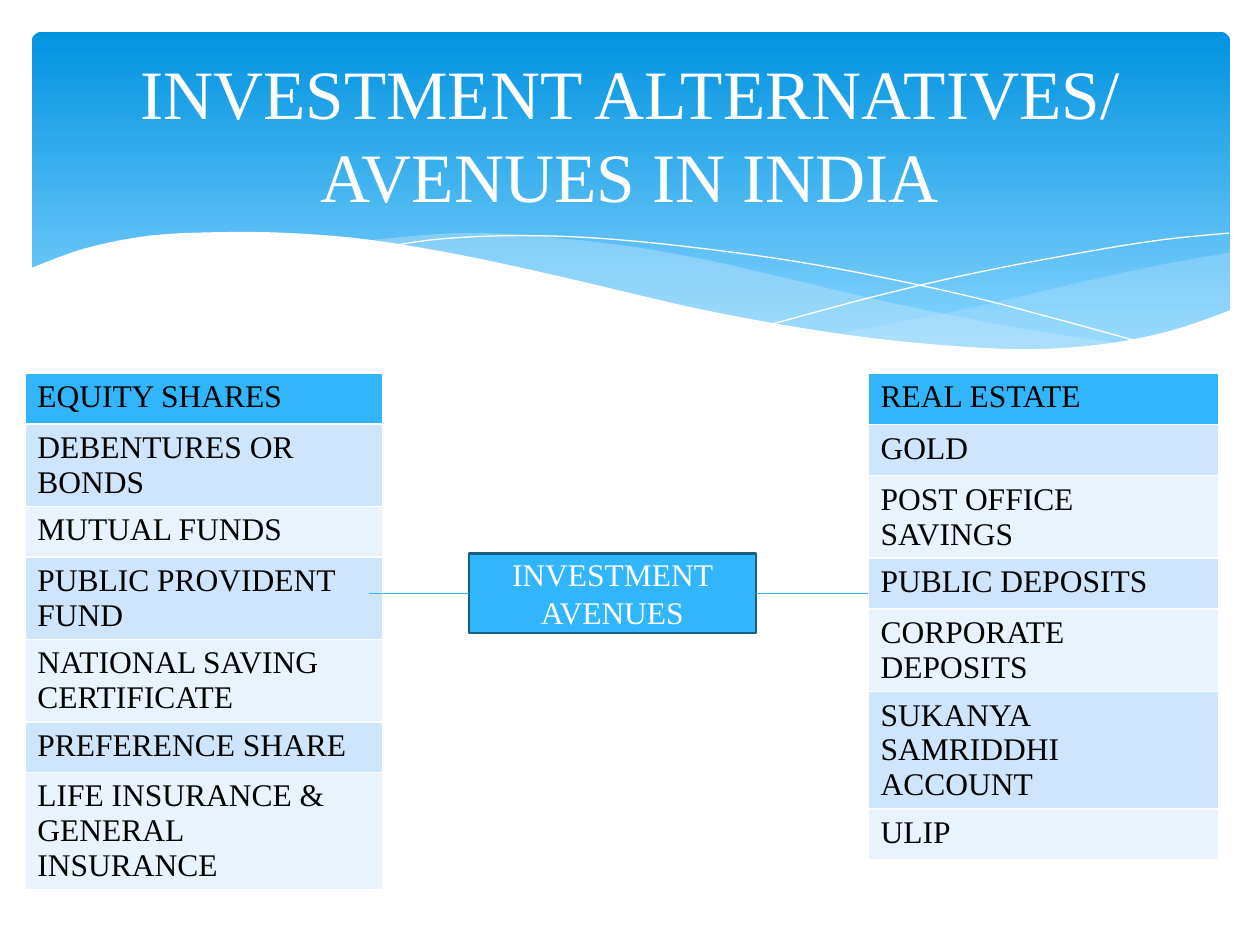
import lxml.etree
import pptx
import pptx.dml.color
import pptx.enum.dml
import pptx.enum.shapes
import pptx.enum.text
import pptx.oxml.ns
import pptx.util

Cm = pptx.util.Cm
Pt = pptx.util.Pt
RGB = pptx.dml.color.RGBColor
qn = pptx.oxml.ns.qn

WHITE = RGB(0xFF, 0xFF, 0xFF)
BLACK = RGB(0, 0, 0)
BLUE = RGB(0x31, 0xB6, 0xFD)
EDGE = RGB(0x19, 0x5F, 0x84)
SKY_TOP = RGB(0x02, 0x93, 0xE0)
SKY_END = RGB(0x83, 0xD3, 0xFE)
HAZE = RGB(0xC6, 0xE7, 0xFC)
BANDS = (RGB(0xCE, 0xE5, 0xFE), RGB(0xE8, 0xF3, 0xFF))

BODY = {"name": "Times New Roman", "size": Pt(18), "bold": False}
HEADING = {**BODY, "size": Pt(39.6)}

RIGHT_WAVE = [
    [(24.16, 4.45), (22.76, 4.7), (21.23, 5.03), (18.49, 5.66), (16.15, 6.1)],
    [(16.15, 6.1), (17.63, 6.27), (19.2, 6.4), (20.57, 6.4), (22.15, 6.22),
     (23.29, 5.94), (24.16, 5.64)],
]
MIDDLE_WAVE = [
    [(22.05, 6.3), (19.86, 5.97), (17.3, 5.46), (15.34, 5), (13.46, 4.57),
     (11.79, 4.29), (10.03, 4.11), (8.53, 4.06), (6.63, 4.22)],
    [(6.63, 4.22), (8.56, 4.52), (10.77, 5), (12.83, 5.46), (15.06, 5.92),
     (17.02, 6.22), (19, 6.4), (20.4, 6.43), (22.05, 6.3)],
]
FALLING_LINE = [
    [(7.21, 4.32), (8.33, 4.17), (9.93, 4.11), (11.79, 4.19), (14.15, 4.45),
     (16.26, 4.78), (18.67, 5.28), (20.47, 5.74), (22.4, 6.27)],
]
RISING_LINE = [
    [(14.94, 5.89), (17.02, 5.33), (19.08, 4.85), (21.36, 4.42),
     (22.83, 4.19), (24.13, 4.06)],
]
WHITE_WAVE = [
    [(24.18, 5.61), (22.99, 6.02), (21.59, 6.3), (19.91, 6.4), (17.81, 6.27),
     (15.82, 6.02), (13.46, 5.59), (10.72, 4.95), (8.64, 4.5), (6.78, 4.19),
     (5.21, 4.06), (3.86, 4.04), (2.39, 4.11), (1.07, 4.37), (-0.05, 4.78)],
    [(-0.05, 7.72), (24.18, 7.72)],
]

LEFT_ITEMS = [
    "EQUITY SHARES", "DEBENTURES OR BONDS", "MUTUAL FUNDS",
    "PUBLIC PROVIDENT FUND", "NATIONAL SAVING CERTIFICATE",
    "PREFERENCE SHARE", "LIFE INSURANCE & GENERAL INSURANCE",
]
RIGHT_ITEMS = [
    "REAL ESTATE", "GOLD", "POST OFFICE SAVINGS", "PUBLIC DEPOSITS",
    "CORPORATE DEPOSITS", "SUKANYA SAMRIDDHI ACCOUNT", "ULIP",
]


def write(tf, text, font, color, align):
    p = tf.paragraphs[0]
    p.alignment = align
    r = p.add_run()
    r.text = text
    for name, value in font.items():
        setattr(r.font, name, value)
    r.font.color.rgb = color


def smooth(knots, steps=5):
    if len(knots) < 3:
        return knots
    ends = [knots[0], *knots, knots[-1]]
    points = [knots[0]]
    for a, b, c, d in zip(ends, ends[1:], ends[2:], ends[3:]):
        for i in range(1, steps + 1):
            t = i / steps
            points.append(tuple(
                q + t / 2 * (r - p + t * (2 * p - 5 * q + 4 * r - s
                                         + t * (3 * (q - r) + s - p)))
                for p, q, r, s in zip(a, b, c, d)))
    return points


def add_curve(s, left, top, edges, fill=None, alpha=100):
    points = [(Cm(left + x), Cm(top + y)) for edge in edges for x, y in smooth(edge)]
    fb = s.shapes.build_freeform(*points[0])
    fb.add_line_segments(points[1:], close=fill is not None)
    sp = fb.convert_to_shape()
    sp.shadow.inherit = False
    if fill is None:
        sp.fill.background()
        sp.line.color.rgb = WHITE
        sp.line.width = Pt(0)
        return
    sp.line.fill.background()
    sp.fill.solid()
    sp.fill.fore_color.rgb = fill
    if alpha < 100:
        clr = sp._element.spPr.find(qn("a:solidFill"))[0]
        lxml.etree.SubElement(clr, qn("a:alpha"), val=str(alpha * 1000))


def add_banner(s, left, top, width, height, text):
    sp = s.shapes.add_shape(pptx.enum.shapes.MSO_SHAPE.ROUNDED_RECTANGLE,
                            Cm(left), Cm(top), Cm(width), Cm(height))
    sp.adjustments[0] = 0.03
    sp.shadow.inherit = False
    sp.line.fill.background()
    sp.fill.gradient()
    sp.fill.gradient_angle = 270
    for stop, position, color in zip(sp.fill.gradient_stops, (0, 0.9), (SKY_TOP, SKY_END)):
        stop.position = position
        stop.color.rgb = color

    add_curve(s, left, top, RIGHT_WAVE, HAZE, 29)
    add_curve(s, left, top, MIDDLE_WAVE, HAZE, 40)
    add_curve(s, left, top, FALLING_LINE)
    add_curve(s, left, top, RISING_LINE)
    add_curve(s, left, top, WHITE_WAVE, WHITE)

    title = s.shapes.title
    box = {"left": Cm(left + 0.63), "top": Cm(top + 0.3),
           "width": Cm(width - 1.3), "height": Cm(3.48)}
    for name, value in box.items():
        setattr(title, name, value)
    tf = title.text_frame
    tf.auto_size = pptx.enum.text.MSO_AUTO_SIZE.NONE
    tf.vertical_anchor = pptx.enum.text.MSO_ANCHOR.MIDDLE
    write(tf, text, HEADING, WHITE, pptx.enum.text.PP_ALIGN.CENTER)
    s.shapes._spTree.append(title._element)


def add_list(s, left, top, width, row_height, items):
    table = s.shapes.add_table(len(items), 1, Cm(left), Cm(top), Cm(width),
                               Cm(row_height * len(items))).table
    for i, item in enumerate(items):
        cell = table.cell(i, 0)
        cell.fill.solid()
        cell.fill.fore_color.rgb = BANDS[(i - 1) % 2] if i else BLUE
        write(cell.text_frame, item, BODY, BLACK, pptx.enum.text.PP_ALIGN.LEFT)


def add_hub(s, left, top, width, height, text, reach_left, reach_right):
    sp = s.shapes.add_shape(pptx.enum.shapes.MSO_SHAPE.RECTANGLE,
                            Cm(left), Cm(top), Cm(width), Cm(height))
    sp.shadow.inherit = False
    sp.fill.solid()
    sp.fill.fore_color.rgb = BLUE
    sp.line.color.rgb = EDGE
    sp.line.width = Pt(1.25)
    tf = sp.text_frame
    tf.word_wrap = True
    tf.vertical_anchor = pptx.enum.text.MSO_ANCHOR.MIDDLE
    write(tf, text, BODY, WHITE, pptx.enum.text.PP_ALIGN.CENTER)

    y = Cm(top + height / 2)
    right = left + width
    for start, end in ((left - reach_left, left), (right, right + reach_right)):
        line = s.shapes.add_connector(pptx.enum.shapes.MSO_CONNECTOR.STRAIGHT,
                                      Cm(start), y, Cm(end), y)
        line.line.color.rgb = BLUE
        line.line.width = Pt(0.75)
        lxml.etree.SubElement(line._element.spPr, qn("a:effectLst"))


def main():
    prs = pptx.Presentation()
    prs.slide_width = Cm(25.4)
    prs.slide_height = Cm(19.05)
    s = prs.slides.add_slide(prs.slide_layouts[5])
    add_banner(s, 0.64, 0.64, 24.16, 6.86, "INVESTMENT ALTERNATIVES/ AVENUES IN INDIA")
    add_list(s, 0.5, 7.53, 7.21, 1.02, LEFT_ITEMS)
    add_list(s, 17.5, 7.53, 7.06, 1.03, RIGHT_ITEMS)
    add_hub(s, 9.45, 11.16, 5.79, 1.6, "INVESTMENT AVENUES", 2.01, 2.26)
    prs.save("out.pptx")


if __name__ == "__main__":
    main()
